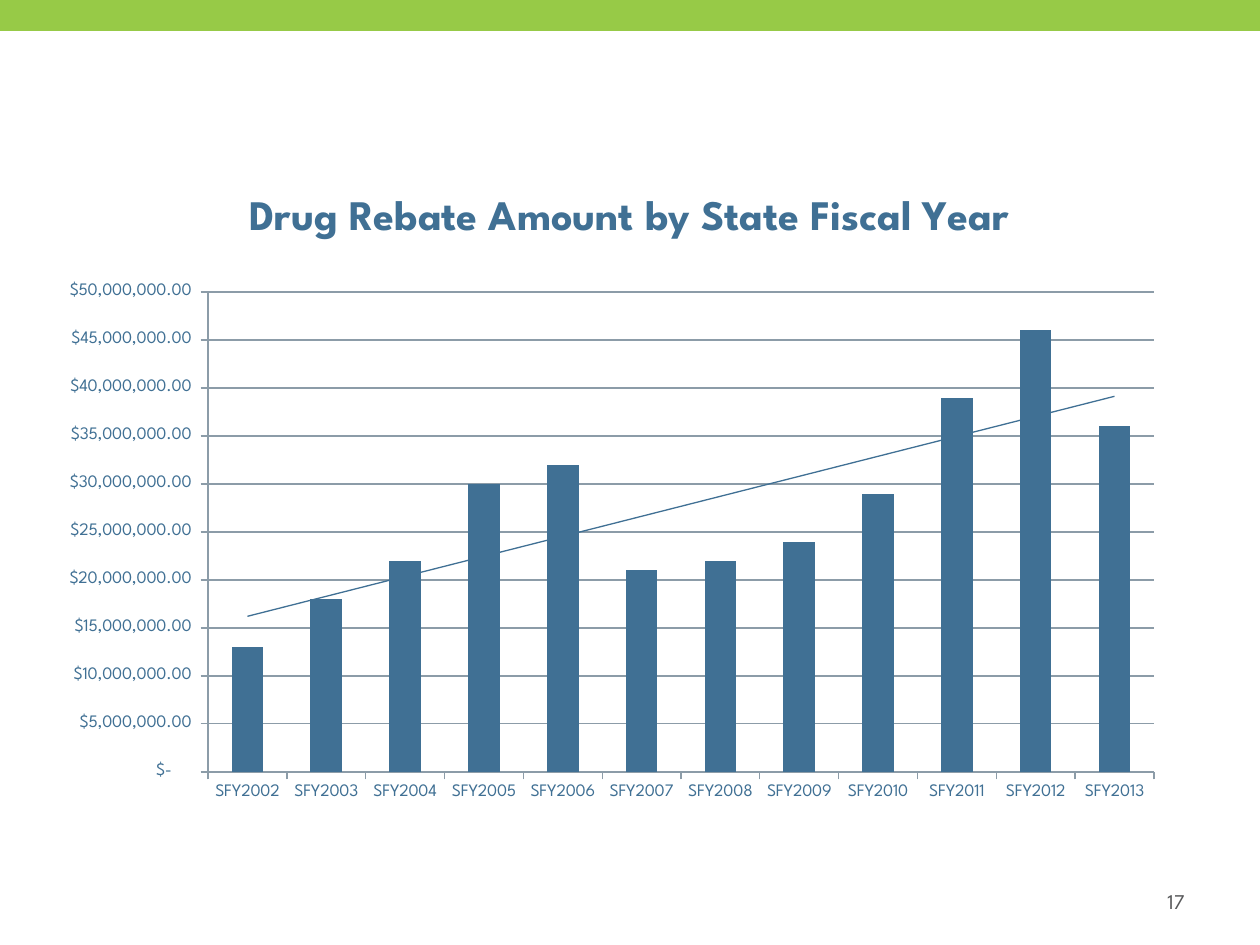
from lxml.etree import SubElement
from pptx import Presentation
from pptx.chart.data import CategoryChartData
from pptx.dml.color import RGBColor
from pptx.enum.chart import XL_CHART_TYPE, XL_TICK_MARK
from pptx.enum.shapes import MSO_SHAPE
from pptx.enum.text import MSO_ANCHOR, PP_ALIGN
from pptx.oxml import parse_xml
from pptx.oxml.ns import nsdecls, qn
from pptx.util import Pt

TITLE = "Drug Rebate Amount by State Fiscal Year"
PAGE_NUMBER = "17"
FIRST_YEAR = 2002
REBATES_MILLIONS = [13, 18, 22, 30, 32, 21, 22, 24, 29, 39, 46, 36]
DOLLARS = '_("$"* #,##0.00_);_("$"* \\(#,##0.00\\);_("$"* "-"??_);_(@_)'
FONT = "League Spartan"
COLORS = {"band": "97CA47", "rebate": "407094", "grid": "8C9CA8", "number": "58595B"}

EMU_PER_PX = 914400 // 126
SLIDE = (1260, 945)
BAND = (0, 0, 1260, 31)
NUMBER = (903, 876, 294, 50)
CHART = (42, 189, 1134, 624)
PLOT = (208, 292, 946, 480)
TITLE_CORNER = (242, 189)


def emu(lengths):
    return [length * EMU_PER_PX for length in lengths]


def color(name):
    return RGBColor.from_string(COLORS[name])


def style(font, size, name, bold=False):
    font.name, font.size, font.bold = FONT, Pt(size), bold
    font.color.rgb = color(name)


def place(parent, box, before, inner=False):
    for old in parent.findall(qn("c:layout")):
        parent.remove(old)
    layout = parse_xml(f"<c:layout {nsdecls('c')}/>")
    manual = SubElement(layout, qn("c:manualLayout"))
    settings = [("layoutTarget", "inner")] if inner else []
    settings += [("xMode", "edge"), ("yMode", "edge")]
    left, top, width, height = CHART
    shares = [(box[0] - left) / width, (box[1] - top) / height]
    shares += [length / whole for length, whole in zip(box[2:], (width, height))]
    settings += [(key, f"{share:.4f}") for key, share in zip("xywh", shares)]
    for key, value in settings:
        SubElement(manual, qn(f"c:{key}")).set("val", value)
    before.addprevious(layout)


prs = Presentation()
prs.slide_width, prs.slide_height = emu(SLIDE)
slide = prs.slides.add_slide(prs.slide_layouts[6])

band = slide.shapes.add_shape(MSO_SHAPE.RECTANGLE, *emu(BAND))
band.shadow.inherit = False
band.fill.solid()
band.fill.fore_color.rgb = color("band")
band.line.fill.background()

number = slide.shapes.add_textbox(*emu(NUMBER)).text_frame
number.word_wrap = True
number.vertical_anchor = MSO_ANCHOR.MIDDLE
number.paragraphs[0].alignment = PP_ALIGN.RIGHT
page = number.paragraphs[0].add_run()
page.text = PAGE_NUMBER
style(page.font, 12, "number")

rebates = CategoryChartData()
rebates.categories = [f"SFY{FIRST_YEAR + i}" for i in range(len(REBATES_MILLIONS))]
rebates.add_series(TITLE, [m * 1_000_000 for m in REBATES_MILLIONS])
chart = slide.shapes.add_chart(XL_CHART_TYPE.COLUMN_CLUSTERED, *emu(CHART), rebates).chart
style(chart.font, 10, "rebate")
chart.has_legend = False

chart.has_title = True
heading = chart.chart_title.text_frame.paragraphs[0].add_run()
heading.text = TITLE
style(heading.font, 24, "rebate", bold=True)
chart_title = chart.chart_title._element
place(chart_title, TITLE_CORNER, chart_title.find(qn("c:overlay")))

columns = chart.plots[0]
columns.gap_width = 150
columns.vary_by_categories = False
series = columns.series[0]
series.format.fill.solid()
series.format.fill.fore_color.rgb = color("rebate")
series._element.find(qn("c:cat")).addprevious(parse_xml(
    f'<c:trendline {nsdecls("c", "a")}><c:spPr><a:ln w="9525"><a:solidFill>'
    f'<a:srgbClr val="{COLORS["rebate"]}"/></a:solidFill></a:ln></c:spPr>'
    '<c:trendlineType val="linear"/><c:dispRSqr val="0"/><c:dispEq val="0"/></c:trendline>'))

years, amounts = chart.category_axis, chart.value_axis
amounts.minimum_scale, amounts.maximum_scale = 0, 50_000_000
amounts.major_unit = 5_000_000
amounts.has_major_gridlines = True
amounts.tick_labels.number_format = DOLLARS
amounts.tick_labels.number_format_is_linked = False
for axis in (years, amounts):
    axis.major_tick_mark = XL_TICK_MARK.OUTSIDE
    style(axis.tick_labels.font, 10, "rebate")
for line in (years.format.line, amounts.format.line, amounts.major_gridlines.format.line):
    line.width = Pt(0.75)
    line.color.rgb = color("grid")
place(columns._element.getparent(), PLOT, columns._element, inner=True)

prs.save("out.pptx")
